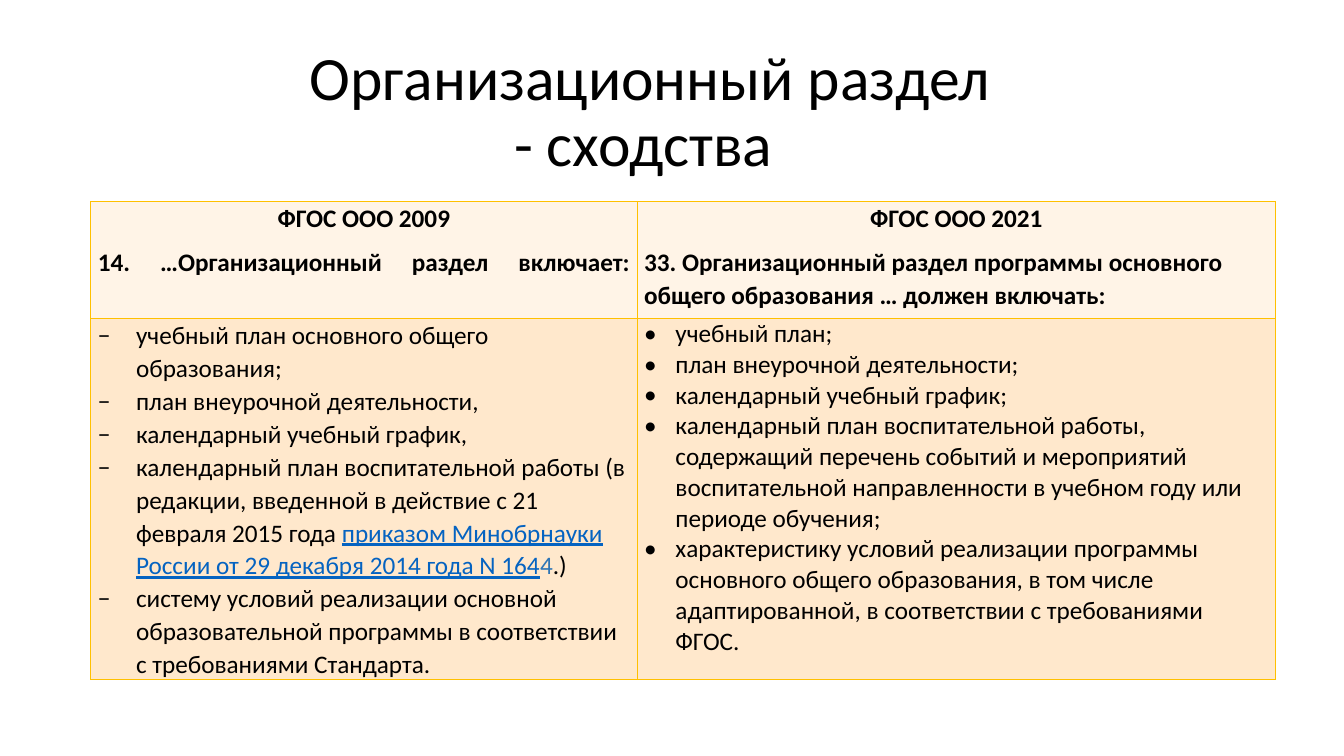
from lxml.etree import SubElement
from pptx import Presentation
from pptx.dml.color import RGBColor
from pptx.enum.text import MSO_ANCHOR as Anchor, PP_ALIGN as Align
from pptx.oxml.ns import qn
from pptx.util import Inches, Pt

BLACK = RGBColor(0x00, 0x00, 0x00)
LINK_BLUE = RGBColor(0x05, 0x63, 0xC1)
PALE_BLUE = RGBColor(0x2E, 0x75, 0xB6)
HEADER_FILL = RGBColor(0xFF, 0xF4, 0xE7)
BODY_FILL = RGBColor(0xFF, 0xE8, 0xCC)
GOLD = RGBColor(0xFF, 0xC0, 0x00)
SPAN_COLORS = (BLACK, LINK_BLUE, PALE_BLUE, BLACK)

HEADERS = [
    ("ФГОС ООО 2009", "14. …Организационный раздел включает:\n", Align.JUSTIFY, 12),
    ("ФГОС ООО 2021", "33. Организационный раздел программы основного общего "
     "образования … должен включать:", Align.LEFT, 8),
]
LISTS = [
    ("−", 0.38, 1.07, [
        "учебный план основного общего образования;",
        "план внеурочной деятельности,",
        "календарный учебный график,",
        "календарный план воспитательной работы (в редакции, введенной в действие "
        "с 21 февраля 2015 года |приказом Минобрнауки России от 29 декабря 2014 "
        "года N 164|4|.)",
        "систему условий реализации основной образовательной программы "
        "в соответствии с требованиями Стандарта.",
    ]),
    ("•", 0.31, 1.0, [
        "учебный план;",
        "план внеурочной деятельности;",
        "календарный учебный график;",
        "календарный план воспитательной работы, содержащий перечень событий "
        "и мероприятий воспитательной направленности в учебном году или периоде обучения;",
        "характеристику условий реализации программы основного общего образования, "
        "в том числе адаптированной, в соответствии с требованиями ФГОС.",
    ]),
]


def style_span(span, size, color=BLACK, bold=False):
    span.font.name = "Calibri"
    span.font.size = Pt(size)
    span.font.bold = bold
    span.font.color.rgb = color


def style_cell(cell, fill):
    cell.margin_left = cell.margin_right = Inches(0.07)
    cell.margin_top = cell.margin_bottom = 0
    properties = cell._tc.get_or_add_tcPr()
    for side in ("a:lnL", "a:lnR", "a:lnT", "a:lnB"):
        line = SubElement(properties, qn(side), w=str(Pt(1)))
        SubElement(SubElement(line, qn("a:solidFill")), qn("a:srgbClr"), val=str(GOLD))
    cell.fill.solid()
    cell.fill.fore_color.rgb = fill


deck = Presentation()
deck.slide_width, deck.slide_height = Inches(13.33), Inches(7.5)
page = deck.slides.add_slide(deck.slide_layouts[6])

title = page.shapes.add_textbox(Inches(2.82), Inches(0.4), Inches(7.26), Inches(1.45))
frame = title.text_frame
frame.word_wrap = True
frame.vertical_anchor = Anchor.MIDDLE
frame.text = "Организационный раздел - сходства "
para = frame.paragraphs[0]
para.alignment = Align.CENTER
para.line_spacing = 0.9
style_span(para.runs[0], 44)

table = page.shapes.add_table(
    2, 2, Inches(0.9), Inches(2), Inches(11.75), Inches(4.74)).table
table.first_row = table.horz_banding = False
for column, width in zip(table.columns, (5.42, 6.33)):
    column.width = Inches(width)
for row, height in zip(table.rows, (1.16, 3.58)):
    row.height = Inches(height)

for index, (standard, intro, alignment, gap) in enumerate(HEADERS):
    cell = table.cell(0, index)
    style_cell(cell, HEADER_FILL)
    lines = ((standard, Align.CENTER, 8), (intro, alignment, gap))
    for number, (text, align, after) in enumerate(lines):
        para = cell.text_frame.add_paragraph() if number else cell.text_frame.paragraphs[0]
        para.text = text
        para.alignment = align
        para.line_spacing = 1.07
        para.space_after = Pt(after)
        style_span(para.runs[0], 18, bold=True)

for index, (bullet, indent, spacing, items) in enumerate(LISTS):
    cell = table.cell(1, index)
    style_cell(cell, BODY_FILL)
    for number, item in enumerate(items):
        para = cell.text_frame.add_paragraph() if number else cell.text_frame.paragraphs[0]
        para.line_spacing = spacing
        properties = para._p.get_or_add_pPr()
        properties.set("marL", str(Inches(indent)))
        properties.set("indent", str(-Inches(indent)))
        SubElement(properties, qn("a:buFont"), typeface="Calibri")
        SubElement(properties, qn("a:buChar"), char=bullet)
        for text, color in zip(item.split("|"), SPAN_COLORS):
            span = para.add_run()
            span.text = text
            style_span(span, 18, color)
            span.font.underline = color == LINK_BLUE

deck.save("out.pptx")
